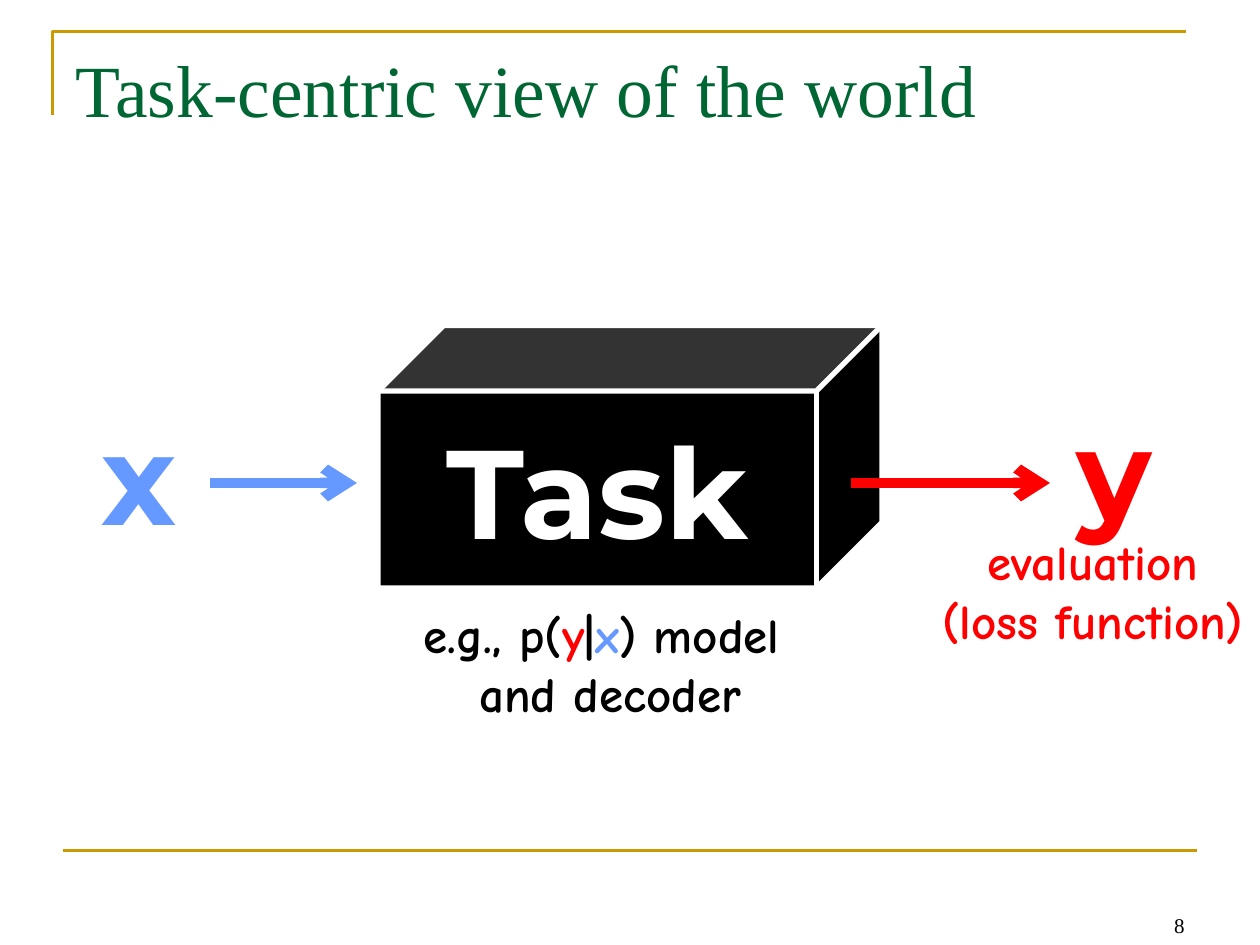
from dataclasses import dataclass

from lxml.etree import SubElement
from pptx import Presentation
from pptx.dml.color import RGBColor
from pptx.enum.shapes import MSO_CONNECTOR, MSO_SHAPE
from pptx.enum.text import MSO_ANCHOR as Anchor, MSO_AUTO_SIZE as AutoSize, PP_ALIGN as Align
from pptx.oxml.ns import qn
from pptx.util import Pt


@dataclass(frozen=True)
class Theme:
    white: str = "FFFFFF"
    black: str = "000000"
    gold: str = "CC9900"
    green: str = "006633"
    input: str = "6699FF"
    output: str = "FF0000"
    serif: str = "Times New Roman"
    display: str = "Montserrat"
    casual: str = "Comic Neue"
    number_size: int = 12
    note_size: int = 28
    title_size: int = 42
    symbol_size: int = 72


THEME = Theme()


def rgb(color):
    return RGBColor.from_string(color)


def format_font(font, name, size, color, bold=False):
    font.name, font.size, font.bold = name, Pt(size), bold
    font.color.rgb = rgb(color)


def add_title(slide, text):
    title = slide.shapes.title
    title.left, title.top, title.width, title.height = Pt(36), Pt(21.6), Pt(648), Pt(90)
    frame = title.text_frame
    frame.text = text
    frame.auto_size = AutoSize.NONE
    frame.vertical_anchor = Anchor.TOP
    paragraph = frame.paragraphs[0]
    paragraph.alignment = Align.LEFT
    format_font(paragraph.font, THEME.serif, THEME.title_size, THEME.green)


def add_line(slide, start, end, color, width, arrow=False):
    line = slide.shapes.add_connector(MSO_CONNECTOR.STRAIGHT, *map(Pt, start + end))
    line.line.color.rgb = rgb(color)
    line.line.width = Pt(width)
    if arrow:
        SubElement(line.line._get_or_add_ln(), qn("a:tailEnd"), type="arrow")
    SubElement(line._element.spPr, qn("a:effectLst"))


def add_corner(slide):
    """Draw the open frame line around the title's upper left corner."""
    builder = slide.shapes.build_freeform(Pt(30), Pt(66), scale=1.0)
    builder.add_line_segments([(Pt(30), Pt(18)), (Pt(678), Pt(18))], close=False)
    corner = builder.convert_to_shape()
    corner.shadow.inherit = False
    corner.fill.background()
    corner.line.color.rgb = rgb(THEME.gold)
    corner.line.width = Pt(1.5)


def add_page_number(slide, number):
    box = slide.shapes.add_textbox(Pt(630), Pt(503.5), Pt(54), Pt(36))
    frame = box.text_frame
    frame.word_wrap = True
    frame.vertical_anchor = Anchor.BOTTOM
    frame.text = number
    paragraph = frame.paragraphs[0]
    paragraph.alignment = Align.RIGHT
    format_font(paragraph.font, THEME.serif, THEME.number_size, THEME.black)


def add_label(slide, bounds, lines, font_name, size):
    """Add centred bold text; each line is a list of (text, color) runs."""
    frame = slide.shapes.add_textbox(*map(Pt, bounds)).text_frame
    frame.word_wrap = False
    frame.auto_size = AutoSize.SHAPE_TO_FIT_TEXT
    paragraph = frame.paragraphs[0]
    paragraph.alignment = Align.CENTER
    for index, line in enumerate(lines):
        if index:
            paragraph.add_line_break()
        for text, color in line:
            run = paragraph.add_run()
            run.text = text
            format_font(run.font, font_name, size, color, bold=True)


def add_task_box(slide, text):
    cube = slide.shapes.add_shape(MSO_SHAPE.CUBE, Pt(216), Pt(186), Pt(288), Pt(150))
    cube.adjustments[0] = 0.25
    cube.shadow.inherit = False
    cube.fill.solid()
    cube.fill.fore_color.rgb = rgb(THEME.black)
    cube.line.color.rgb = rgb(THEME.white)
    cube.line.width = Pt(3)
    frame = cube.text_frame
    frame.word_wrap = False
    frame.vertical_anchor = Anchor.MIDDLE
    frame.text = text
    paragraph = frame.paragraphs[0]
    paragraph.alignment = Align.CENTER
    format_font(paragraph.font, THEME.display, THEME.symbol_size, THEME.white, bold=True)


def add_variable(slide, name, bounds, color, arrow_start, arrow_end):
    """Add a large variable name and the flow arrow that belongs to it."""
    flow_y = 276
    add_label(slide, bounds, [[(name, color)]], THEME.display, THEME.symbol_size)
    add_line(slide, (arrow_start, flow_y), (arrow_end, flow_y), color, 6, arrow=True)


def main():
    presentation = Presentation()
    presentation.slide_width, presentation.slide_height = Pt(720), Pt(540)
    slide = presentation.slides.add_slide(presentation.slide_layouts[5])

    add_corner(slide)
    add_line(slide, (36, 486), (684, 486), THEME.gold, 1.5)
    add_page_number(slide, "8")
    add_title(slide, "Task-centric view of the world")

    add_task_box(slide, "Task")
    add_variable(slide, "x", (48, 224.5, 63, 93.5), THEME.input, 120, 204)
    add_variable(slide, "y", (607.5, 222, 58.5, 93.5), THEME.output, 486, 600)

    model_note = [
        [("e.g., p(", THEME.black), ("y", THEME.output), ("|", THEME.black),
         ("x", THEME.input), (") model ", THEME.black)],
        [("and decoder", THEME.black)],
    ]
    loss_note = [[("evaluation", THEME.output)], [("(loss function)", THEME.output)]]
    add_label(slide, (212, 342, 273.5, 74), model_note, THEME.casual, THEME.note_size)
    add_label(slide, (522, 300, 205, 74), loss_note, THEME.casual, THEME.note_size)

    presentation.save("out.pptx")


if __name__ == "__main__":
    main()
